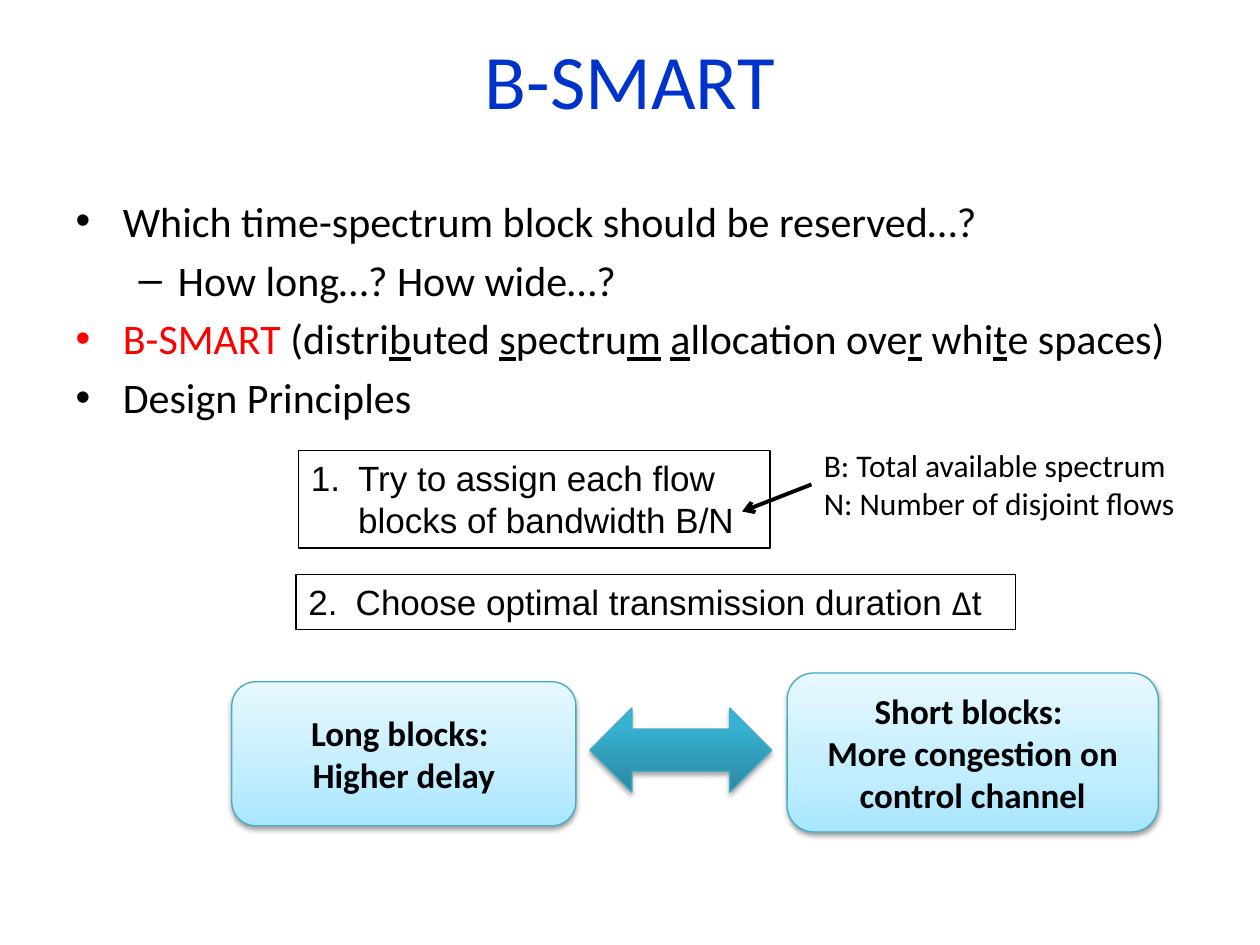
from lxml.etree import SubElement
from pptx import Presentation
from pptx.dml.color import RGBColor
from pptx.enum.shapes import MSO_CONNECTOR, MSO_SHAPE
from pptx.enum.text import MSO_ANCHOR, MSO_AUTO_SIZE, PP_ALIGN
from pptx.oxml.ns import qn
from pptx.util import Pt

COLORS = {
    "title": "0033CC", "text": "000000", "accent": "FF0000", "paper": "FFFFFF",
    "edge": "46AAC5",
}
BLOCK_STOPS = [(0, "A7E6FF"), (35, "C1EDFF"), (100, "E7F8FF")]
ARROW_STOPS = [(0, "2A88A2"), (80, "37B1D2"), (100, "34B4D6")]
BULLETS = [
    (0, "Which time-spectrum block should be reserved…?"),
    (1, "How long…? How wide…?"),
    (0, "*B-SMART* (distri_b_uted _s_pectru_m_ _a_llocation ove_r_ whi_t_e spaces)"),
    (0, "Design Principles"),
]
PRINCIPLES = [
    ((170.5, 257.5, 269.5, 55.7), ["1. \tTry to assign each flow \vblocks of bandwidth B/N"]),
    ((169.2, 328.3, 411.2, 31.5), ["2. \tChoose optimal transmission duration ", "Δ", "t"]),
]
BLOCKS = [
    ((132.5, 389.6, 196.6, 82.3), "Long blocks: \nHigher delay"),
    ((449.8, 384.6, 212, 90.8), "Short blocks: \nMore congestion on control channel"),
]


class SlideBuilder:
    """Holds the style and the current slide, and adds each kind of element."""

    def __init__(self, slide, colors, font="Calibri", list_font="Arial"):
        self.slide = slide
        self.colors = colors
        self.font = font
        self.list_font = list_font

    def color(self, name):
        return RGBColor.from_string(self.colors[name])

    def format_run(self, run, size, color="text", font=None, bold=None):
        run.font.name = font or self.font
        run.font.size = Pt(size)
        run.font.color.rgb = self.color(color)
        run.font.bold = bold

    def format_text(self, text_frame, size, **style):
        for paragraph in text_frame.paragraphs:
            for run in paragraph.runs:
                self.format_run(run, size, **style)

    def place(self, shape, box):
        shape.left, shape.top, shape.width, shape.height = map(Pt, box)

    def title(self, box, text):
        shape = self.slide.shapes.title
        self.place(shape, box)
        shape.text_frame.text = text
        self.format_text(shape.text_frame, 44, color="title")

    def bullets(self, box, items):
        shape = self.slide.placeholders[1]
        self.place(shape, box)
        text_frame = shape.text_frame
        text_frame.text = "\n".join(text for _, text in items)
        for paragraph, (level, text) in zip(text_frame.paragraphs, items):
            paragraph.level = level
            paragraph.clear()
            lead, _, rest = text[1:].partition("*") if text[0] == "*" else ("", "", text)
            if lead:
                run = paragraph.add_run()
                run.text = lead
                self.format_run(run, 24, "accent")
            for index, part in enumerate(rest.split("_")):
                run = paragraph.add_run()
                run.text = part
                self.format_run(run, 24)
                run.font.underline = index % 2 == 1

    def preset(self, kind, box, line):
        shape = self.slide.shapes.add_shape(kind, *map(Pt, box))
        shape.shadow.inherit = False
        shape.line.color.rgb = self.color(line)
        shape.line.width = Pt(0.75)
        return shape

    def principle(self, box, parts):
        shape = self.preset(MSO_SHAPE.RECTANGLE, box, "text")
        shape.fill.solid()
        shape.fill.fore_color.rgb = self.color("paper")
        text_frame = shape.text_frame
        text_frame.vertical_anchor = MSO_ANCHOR.TOP
        text_frame.auto_size = MSO_AUTO_SIZE.SHAPE_TO_FIT_TEXT
        paragraph = text_frame.paragraphs[0]
        paragraph.text = parts[0]
        for part in parts[1:]:
            paragraph.add_run().text = part
        paragraph.alignment = PP_ALIGN.LEFT
        properties = paragraph._p.get_or_add_pPr()
        properties.set("marL", str(Pt(27)))
        properties.set("indent", str(-Pt(27)))
        for run in paragraph.runs:
            self.format_run(run, 20, font=self.font if run.text == "Δ" else self.list_font)

    def note(self, box, text):
        shape = self.slide.shapes.add_textbox(*map(Pt, box))
        shape.text_frame.text = text
        shape.text_frame.word_wrap = False
        shape.text_frame.auto_size = MSO_AUTO_SIZE.SHAPE_TO_FIT_TEXT
        self.format_text(shape.text_frame, 18)
        return shape

    def pointer(self, source, start, end):
        connector = self.slide.shapes.add_connector(
            MSO_CONNECTOR.STRAIGHT, *map(Pt, start + end))
        connector.begin_connect(source, 1)
        connector.line.color.rgb = self.color("text")
        connector.line.width = Pt(2.25)
        SubElement(connector.line._get_or_add_ln(), qn("a:tailEnd"), type="arrow")
        SubElement(connector._element.spPr, qn("a:effectLst"))

    def glossy(self, kind, box, stops, shadow_alpha, shadow_distance):
        shape = self.preset(kind, box, "edge")
        shape.fill.gradient()
        shape.fill.gradient_angle = 90
        properties = shape._element.spPr
        stop_list = properties.find(".//" + qn("a:gsLst"))
        for stop in list(stop_list):
            stop_list.remove(stop)
        for position, color in stops:
            stop = SubElement(stop_list, qn("a:gs"), pos=str(position * 1000))
            SubElement(stop, qn("a:srgbClr"), val=color)
        shadow = SubElement(
            properties.find(qn("a:effectLst")), qn("a:outerShdw"), blurRad=str(Pt(3.1)),
            dist=str(Pt(shadow_distance)), dir="5400000", rotWithShape="0")
        shade = SubElement(shadow, qn("a:srgbClr"), val=self.colors["text"])
        SubElement(shade, qn("a:alpha"), val=str(shadow_alpha * 1000))
        return shape

    def block(self, box, text):
        shape = self.glossy(MSO_SHAPE.ROUNDED_RECTANGLE, box, BLOCK_STOPS, 38, 1.6)
        shape.text_frame.text = text
        shape.text_frame.word_wrap = True
        for paragraph in shape.text_frame.paragraphs:
            paragraph.alignment = PP_ALIGN.CENTER
        self.format_text(shape.text_frame, 20, bold=True)

    def double_arrow(self, box):
        self.glossy(MSO_SHAPE.LEFT_RIGHT_ARROW, box, ARROW_STOPS, 35, 1.8)


def main():
    presentation = Presentation()
    presentation.slide_width, presentation.slide_height = Pt(720), Pt(540)
    slide = presentation.slides.add_slide(presentation.slide_layouts[1])
    builder = SlideBuilder(slide, COLORS)
    builder.title((36, 0, 648, 90), "B-SMART")
    builder.bullets((36, 108, 648, 374.4), BULLETS)
    for box, parts in PRINCIPLES:
        builder.principle(box, parts)
    note = builder.note((463.7, 251.3, 219.6, 51.1),
                        "B: Total available spectrum\nN: Number of disjoint flows")
    builder.pointer(note, (463.7, 276.9), (424.1, 292.3))
    for box, text in BLOCKS:
        builder.block(box, text)
    builder.double_arrow((337, 404.6, 104, 48.2))
    presentation.save("out.pptx")


if __name__ == "__main__":
    main()
